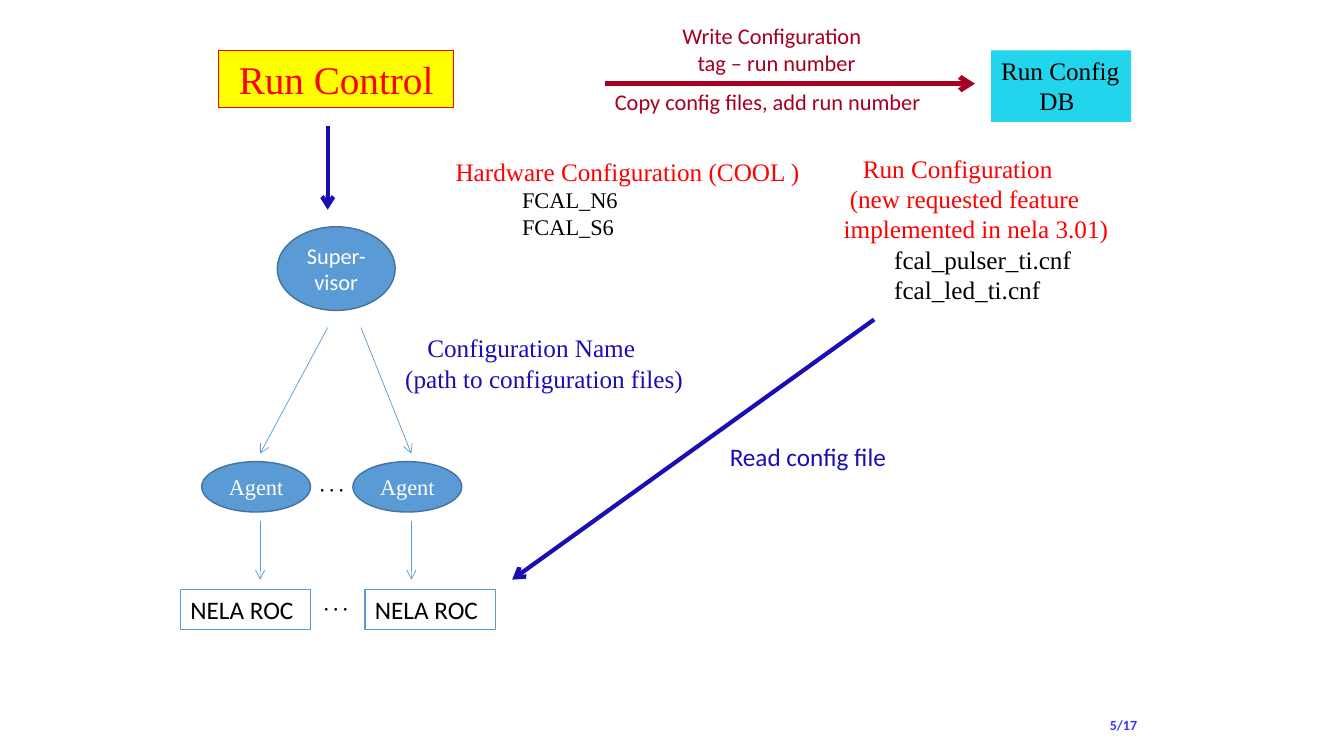
from lxml import etree
from pptx import Presentation
from pptx.dml.color import RGBColor
from pptx.enum.shapes import MSO_CONNECTOR, MSO_SHAPE
from pptx.enum.text import MSO_ANCHOR, MSO_AUTO_SIZE, PP_ALIGN
from pptx.oxml.ns import qn
from pptx.util import Inches, Pt

THEME = {
    "red": RGBColor(0xFF, 0x00, 0x00),
    "yellow": RGBColor(0xFF, 0xFF, 0x00),
    "maroon": RGBColor(0xA5, 0x00, 0x21),
    "navy": RGBColor(0x19, 0x0D, 0xB3),
    "blue": RGBColor(0x5B, 0x9B, 0xD5),
    "edge": RGBColor(0x43, 0x73, 0x9E),
    "cyan": RGBColor(0x22, 0xD4, 0xEC),
    "violet": RGBColor(0x33, 0x33, 0xFF),
    "black": RGBColor(0x00, 0x00, 0x00),
    "white": RGBColor(0xFF, 0xFF, 0xFF),
    "sans": "Calibri",
    "serif": "Times New Roman",
    "heading": Pt(28),
    "body": Pt(18),
    "label": Pt(16),
    "footer": Pt(10),
    "dots": Pt(8),
}


def write_text(box, lines, font, wrap, align=PP_ALIGN.LEFT):
    frame = box.text_frame
    frame.word_wrap = wrap
    for index, (text, size, colour, indent) in enumerate(lines):
        para = frame.add_paragraph() if index else frame.paragraphs[0]
        para.alignment = align
        para._p.get_or_add_pPr().set("marL", str(Inches(indent)))
        span = para.add_run()
        span.text = text
        look = {"name": THEME[font], "size": THEME[size], "bold": size == "footer"}
        for name, value in look.items():
            setattr(span.font, name, value)
        span.font.color.rgb = THEME[colour]
        if size == "dots":
            span._r.get_or_add_rPr().set("spc", "100")


def add_box(kind, place, fill, edge, width):
    box = page.shapes.add_shape(kind, *map(Inches, place))
    box.shadow.inherit = False
    if fill:
        box.fill.solid()
        box.fill.fore_color.rgb = THEME[fill]
    else:
        box.fill.background()
    if edge:
        box.line.color.rgb = THEME[edge]
        box.line.width = Pt(width)
    else:
        box.line.fill.background()
    return box


deck = Presentation()
deck.slide_width = Inches(13.33)
deck.slide_height = Inches(7.5)
page = deck.slides.add_slide(deck.slide_layouts[6])

rectangles = [
    ((2.17, 0.5, 2.33, 0.57), "yellow", "red", "serif", True,
     [("Run Control", "heading", "red", 0.1)]),
    ((9.83, 0.5, 1.39, 0.71), "cyan", None, "serif", False,
     [("Run Config", "body", "black", 0), ("DB", "body", "black", 0.38)]),
]
for left in (1.79, 3.62):
    rectangles.append(((left, 5.85, 1.29, 0.4), None, "blue", "sans", False,
                       [("NELA ROC", "body", "black", 0)]))
for place, fill, edge, font, wrap, lines in rectangles:
    box = add_box(MSO_SHAPE.RECTANGLE, place, fill, edge, 0.75)
    write_text(box, lines, font, wrap)
    box.text_frame.vertical_anchor = MSO_ANCHOR.TOP
    box.text_frame.auto_size = MSO_AUTO_SIZE.SHAPE_TO_FIT_TEXT

ellipses = [
    ((2.75, 2.25, 1.17, 0.83), "Super-visor", "sans"),
    ((2, 4.58, 1.08, 0.5), "Agent", "serif"),
    ((3.5, 4.58, 1.08, 0.5), "Agent", "serif"),
]
for place, text, font in ellipses:
    box = add_box(MSO_SHAPE.OVAL, place, "blue", "edge", 1)
    write_text(box, [(text, "label", "white", 0)], font, True, PP_ALIGN.CENTER)
    box.text_frame.vertical_anchor = MSO_ANCHOR.MIDDLE

arrows = [
    ((3.25, 1.25, 3.25, 2.08), "navy", 3),
    ((3.25, 3.25, 2.58, 4.5), "blue", 0.5),
    ((3.58, 3.25, 4.08, 4.5), "blue", 0.5),
    ((2.58, 5.17, 2.58, 5.75), "blue", 0.5),
    ((4.08, 5.17, 4.08, 5.75), "blue", 0.5),
    ((8.67, 3.17, 5.08, 5.75), "navy", 3),
    ((6, 0.83, 9.67, 0.83), "maroon", 3.5),
]
for ends, colour, width in arrows:
    arrow = page.shapes.add_connector(MSO_CONNECTOR.STRAIGHT, *map(Inches, ends))
    arrow.line.color.rgb = THEME[colour]
    arrow.line.width = Pt(width)
    etree.SubElement(arrow.line._get_or_add_ln(), qn("a:tailEnd"), type="arrow")
    etree.SubElement(arrow._element.spPr, qn("a:effectLst"))

labels = [
    ((6.67, 0.17, 2, 0.64), "sans", False,
     [("Write Configuration", "label", "maroon", 0),
      ("tag – run number", "label", "maroon", 0.15)]),
    ((6, 0.83, 3.27, 0.37), "sans", False,
     [("Copy config files, add run number", "label", "maroon", 0)]),
    ((4.42, 1.5, 3.67, 1.25), "serif", True,
     [("Hardware Configuration (COOL )", "body", "red", 0),
      ("FCAL_N6", "label", "black", 0.66),
      ("FCAL_S6", "label", "black", 0.66)]),
    ((8.08, 1.47, 3.17, 1.62), "serif", True,
     [("Run Configuration", "body", "red", 0.38),
      ("(new requested feature", "body", "red", 0.25),
      ("implemented in nela 3.01)", "body", "red", 0.19),
      ("fcal_pulser_ti.cnf", "body", "black", 0.69),
      ("fcal_led_ti.cnf", "body", "black", 0.69)]),
    ((3.92, 3.25, 3.08, 0.71), "serif", True,
     [("Configuration Name", "body", "navy", 0.22),
      ("(path to configuration files)", "body", "navy", 0)]),
    ((7.08, 4.33, 1.83, 0.4), "sans", False,
     [("Read config file", "body", "navy", 0.06)]),
    ((3.08, 4.75, 0.47, 0.24), "serif", False, [("• • •", "dots", "black", 0)]),
    ((3.12, 5.93, 0.47, 0.24), "serif", False, [("• • •", "dots", "black", 0)]),
    ((10.91, 7.06, 0.6, 0.27), "sans", True, [("5/17", "footer", "violet", 0)]),
]
for place, font, wrap, lines in labels:
    box = page.shapes.add_textbox(*map(Inches, place))
    write_text(box, lines, font, wrap)
    box.text_frame.auto_size = MSO_AUTO_SIZE.SHAPE_TO_FIT_TEXT

deck.save("out.pptx")
